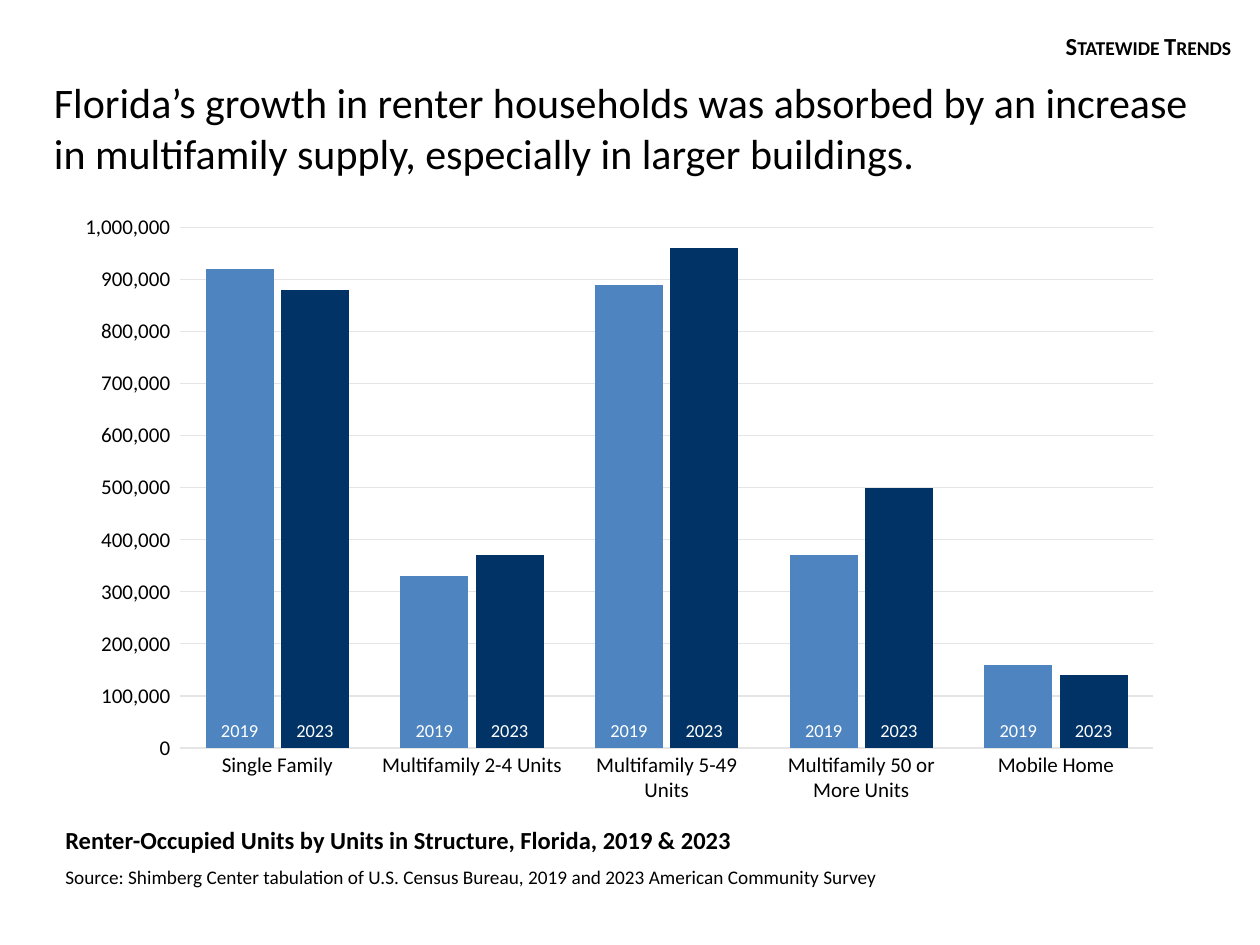
"""Build a slide on Florida renter households by type of structure."""
from pptx import Presentation
from pptx.chart import data
from pptx.dml.color import RGBColor
from pptx.enum import chart as ch, text as tx
from pptx.util import Inches, Pt

BLACK = RGBColor(0, 0, 0)
WHITE = RGBColor(255, 255, 255)
GRAY = RGBColor(0xE5, 0xE5, 0xE5)
BLUE = RGBColor(0x4E, 0x85, 0xC0)
NAVY = RGBColor(0x02, 0x33, 0x66)
FONT = "Calibri"
FORM = r"#,##0_);[Red]\(#,##0\)"


def style(font, size, color=BLACK, bold=False):
    font.name, font.size, font.bold = FONT, Pt(size), bold
    font.color.rgb = color


def add_text(words, left, top, width, height, size, bold=False):
    box = slide.shapes.add_textbox(Inches(left), Inches(top), Inches(width), Inches(height))
    box.text_frame.word_wrap = True
    para = box.text_frame.paragraphs[0]
    para.add_run().text = words
    style(para.font, size, bold=bold)
    return box.text_frame, para


prs = Presentation()
prs.slide_width, prs.slide_height = Inches(10), Inches(7.5)
slide = prs.slides.add_slide(prs.slide_layouts[6])

frame, para = add_text(
    "Florida’s growth in renter households was absorbed by an increase "
    "in multifamily supply, especially in larger buildings.",
    0.33, 0.65, 9.34, 0.81, 24)
frame.vertical_anchor = tx.MSO_ANCHOR.BOTTOM

frame, para = add_text("Renter-Occupied Units by Units in Structure, Florida, 2019 & 2023",
                       0.42, 6.47, 8.67, 0.35, 14, True)
para.line_spacing = 1.12
para.space_before = para.space_after = Pt(10)

add_text("Source: Shimberg Center tabulation of U.S. Census Bureau, "
         "2019 and 2023 American Community Survey", 0.42, 6.82, 9, 0.29, 11)

frame, para = add_text("Statewide Trends", 8.32, 0.2, 1.55, 0.34, 14, True)
frame.word_wrap = False
para.alignment = tx.PP_ALIGN.RIGHT
para.space_before = Pt(6)
para.runs[0].font._element.set("cap", "small")

info = data.CategoryChartData(number_format=FORM)
info.categories = ["Single Family", "Multifamily 2-4 Units", "Multifamily 5-49 Units",
                   "Multifamily 50 or More Units", "Mobile Home"]
info.add_series("2019", [920000, 330000, 890000, 370000, 160000])
info.add_series("2023", [880000, 370000, 960000, 500000, 140000])
chart = slide.shapes.add_chart(
    ch.XL_CHART_TYPE.COLUMN_CLUSTERED,
    Inches(0.5), Inches(1.61), Inches(8.83), Inches(4.86), info).chart
chart.has_legend = chart.has_title = False
style(chart.font, 11)

for axis in (chart.category_axis, chart.value_axis):
    axis.major_tick_mark = axis.minor_tick_mark = ch.XL_TICK_MARK.NONE
    style(axis.tick_labels.font, 12)
cat, val = chart.category_axis, chart.value_axis
val.minimum_scale, val.maximum_scale, val.major_unit = 0, 1000000, 100000
val.tick_labels.number_format = FORM
val.tick_labels.number_format_is_linked = False
val.format.line.fill.background()
for line in (cat.format.line, val.major_gridlines.format.line):
    line.color.rgb = GRAY
    line.width = Pt(0.75)

plot = chart.plots[0]
plot.gap_width, plot.overlap, plot.vary_by_categories = 76, -11, False
for series, color in zip(plot.series, (BLUE, NAVY)):
    series.format.fill.solid()
    series.format.fill.fore_color.rgb = color
    labels = series.data_labels
    labels.show_series_name, labels.show_value = True, False
    labels.position = ch.XL_LABEL_POSITION.INSIDE_BASE
    style(labels.font, 10.5, WHITE)

prs.save("out.pptx")
